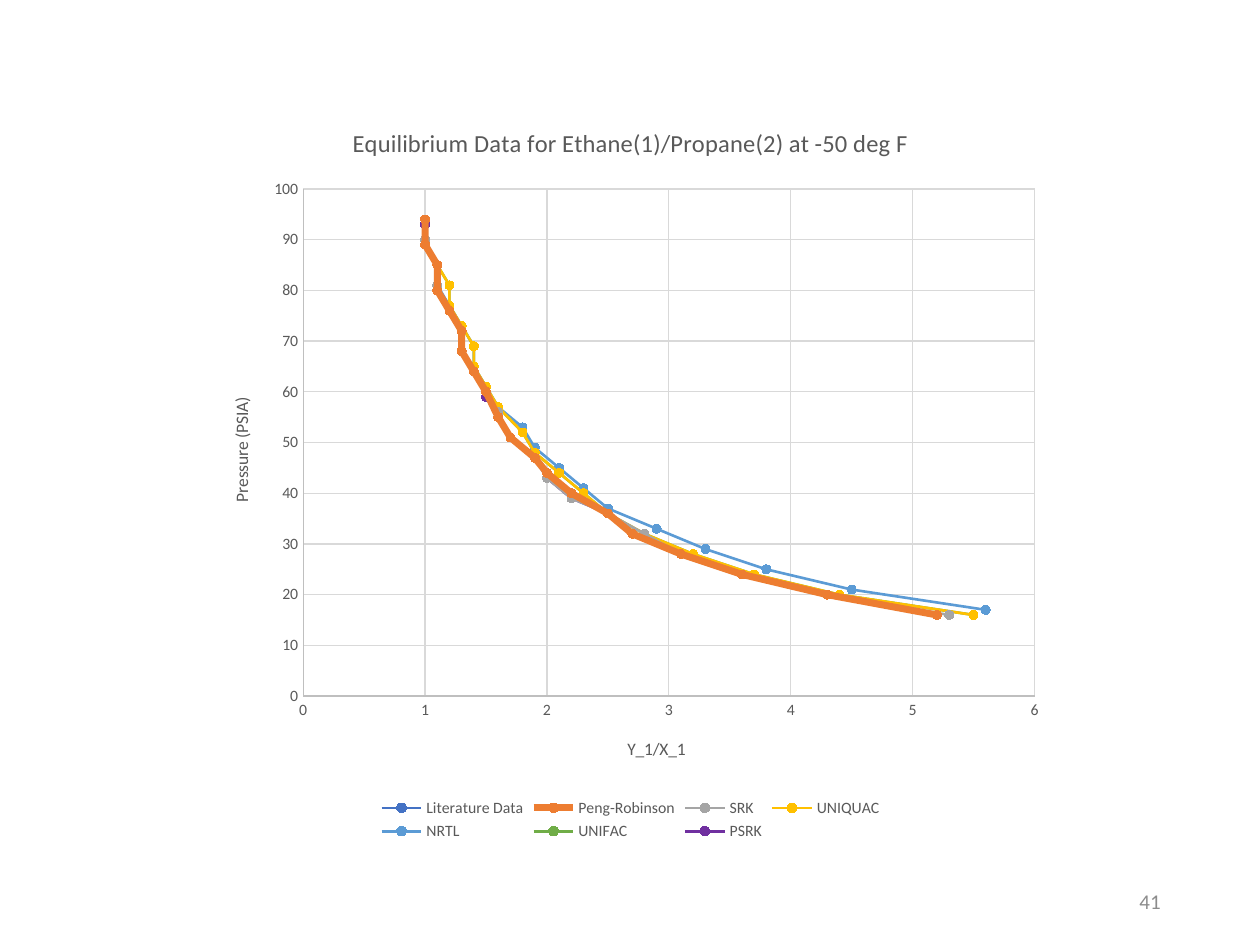
from lxml import etree
from pptx import Presentation, util as u
from pptx.chart.data import XyChartData
from pptx.dml.color import RGBColor
from pptx.enum import chart as ch, text as tx
from pptx.oxml.ns import qn

# Content
TITLE = "Equilibrium Data for Ethane(1)/Propane(2) at -50 deg F"
X_TITLE, Y_TITLE = "Y_1/X_1", "Pressure (PSIA)"
PAGE_NUMBER = "41"
FONT = "Calibri"
COLORS = {"text": "595959", "axis": "BFBFBF", "grid": "D9D9D9", "page": "8C8C8C"}

UNI_RATIOS = [5.5, 4.4, 3.7, 3.2, 2.8, 2.5, 2.3, 2.1, 1.9, 1.8,
              1.6, 1.5, 1.4, 1.4, 1.3, 1.2, 1.2, 1.1, 1, 1]
UNI_PRESSURES = [16, 20, 24, 28, 32, 36, 40, 44, 48, 52,
                 57, 61, 65, 69, 73, 77, 81, 85, 89, 94]
# name, line colour, marker colour, line width, ratios, pressures
MODELS = [
    ("Literature Data", "4472C4", "4472C4", 1.5,
     [4.7, 2.7, 1.9, 1.5, 1.3, 1.2, 1], [15, 28, 41, 55, 66, 75, 93]),
    ("Peng-Robinson", "ED7D31", "ED7D31", 4,
     [5.2, 4.3, 3.6, 3.1, 2.7, 2.5, 2.2, 2, 1.9, 1.7,
      1.6, 1.5, 1.4, 1.3, 1.3, 1.2, 1.1, 1.1, 1, 1],
     [16, 20, 24, 28, 32, 36, 40, 44, 47, 51,
      55, 60, 64, 68, 72, 76, 80, 85, 89, 94]),
    ("SRK", "A5A5A5", "A5A5A5", 1.5,
     [5.3, 4.3, 3.6, 3.1, 2.8, 2.5, 2.2, 2, 1.9, 1.7,
      1.6, 1.5, 1.4, 1.3, 1.3, 1.2, 1.1, 1.1, 1, 1],
     [16, 20, 24, 28, 32, 36, 39, 43, 47, 51,
      56, 60, 64, 68, 72, 76, 81, 85, 90, 94]),
    ("UNIQUAC", "FFC000", "FFC000", 1.5, UNI_RATIOS, UNI_PRESSURES),
    ("NRTL", "5B9BD5", "5B9BD5", 1.5,
     [5.6, 4.5, 3.8, 3.3, 2.9, 2.5, 2.3, 2.1, 1.9, 1.8,
      1.6, 1.5, 1.4, 1.4, 1.3, 1.2, 1.1, 1.1, 1, 1],
     [17, 21, 25, 29, 33, 37, 41, 45, 49, 53,
      57, 61, 65, 69, 73, 77, 81, 85, 89, 94]),
    ("UNIFAC", "70AD47", "70AD47", 1.5, UNI_RATIOS, UNI_PRESSURES),
    ("PSRK", "7030A0", "264478", 1.5,
     [5.2, 4.3, 3.6, 3.1, 2.7, 2.5, 2.2, 2, 1.9, 1.7,
      1.6, 1.5, 1.4, 1.3, 1.3, 1.2, 1.1, 1.1, 1, 1],
     [16, 20, 24, 28, 32, 36, 39, 43, 47, 51,
      55, 59, 64, 68, 72, 76, 80, 85, 89, 93]),
]
PLOT_AREA = {"x": 0.115, "y": 0.12, "w": 0.86, "h": 0.68}  # shares of the chart


def set_font(font, size, color):
    font.name, font.size, font.bold = FONT, u.Pt(size), False
    font.color.rgb = RGBColor.from_string(color)


def write(frame, text, size, color=COLORS["text"], align=tx.PP_ALIGN.CENTER):
    paragraph = frame.paragraphs[0]
    paragraph.alignment = align
    run = paragraph.add_run()
    run.text = text
    set_font(run.font, size, color)


def set_line(line, color, width):
    line.color.rgb = RGBColor.from_string(color)
    line.width = u.Pt(width)


def style_axis(axis, title, top, step):
    axis.minimum_scale, axis.maximum_scale, axis.major_unit = 0, top, step
    axis.major_tick_mark = axis.minor_tick_mark = ch.XL_TICK_MARK.NONE
    axis.has_major_gridlines = True
    set_line(axis.major_gridlines.format.line, COLORS["grid"], 0.75)
    set_line(axis.format.line, COLORS["axis"], 0.75)
    set_font(axis.tick_labels.font, 9, COLORS["text"])
    axis.tick_labels.number_format = "General"
    axis.tick_labels.number_format_is_linked = False
    write(axis.axis_title.text_frame, title, 10)


def place_plot(chart):
    area = chart._chartSpace.chart.plotArea
    for old in area.findall(qn("c:layout")):
        area.remove(old)
    layout = etree.Element(qn("c:layout"))
    manual = etree.SubElement(layout, qn("c:manualLayout"))
    settings = {"layoutTarget": "inner", "xMode": "edge", "yMode": "edge", **PLOT_AREA}
    for tag, value in settings.items():
        etree.SubElement(manual, qn("c:" + tag)).set("val", str(value))
    area.insert(0, layout)


prs = Presentation()
prs.slide_width, prs.slide_height = u.Inches(10), u.Inches(7.5)
slide = prs.slides.add_slide(prs.slide_layouts[6])

# Equilibrium chart
data = XyChartData()
for name, _, _, _, ratios, pressures in MODELS:
    points = data.add_series(name)
    for ratio, pressure in zip(ratios, pressures):
        points.add_data_point(ratio, pressure)
chart = slide.shapes.add_chart(
    ch.XL_CHART_TYPE.XY_SCATTER_SMOOTH, u.Inches(1.63), u.Inches(0.79),
    u.Inches(6.75), u.Inches(5.92), data).chart
set_font(chart.font, 10, "000000")
chart.has_title = True
write(chart.chart_title.text_frame, TITLE, 14)
chart.chart_title.include_in_layout = False
style_axis(chart.category_axis, X_TITLE, 6, 1)
style_axis(chart.value_axis, Y_TITLE, 100, 10)
place_plot(chart)

chart.has_legend = True
chart.legend.position = ch.XL_LEGEND_POSITION.BOTTOM
chart.legend.include_in_layout = False
set_font(chart.legend.font, 9, COLORS["text"])

# Curves
chart.plots[0].vary_by_categories = False
for curve, (_, line_color, marker_color, width, _, _) in zip(chart.plots[0].series, MODELS):
    curve.smooth = True
    set_line(curve.format.line, line_color, width)
    marker = curve.marker
    marker.style, marker.size = ch.XL_MARKER_STYLE.CIRCLE, 5
    marker.format.fill.solid()
    marker.format.fill.fore_color.rgb = RGBColor.from_string(marker_color)
    set_line(marker.format.line, marker_color, 0.75)

# Page number
page = slide.shapes.add_textbox(
    u.Inches(7.06), u.Inches(6.95), u.Inches(2.25), u.Inches(0.4)).text_frame
page.word_wrap = True
page.vertical_anchor = tx.MSO_ANCHOR.MIDDLE
write(page, PAGE_NUMBER, 12, COLORS["page"], tx.PP_ALIGN.RIGHT)

prs.save("out.pptx")
